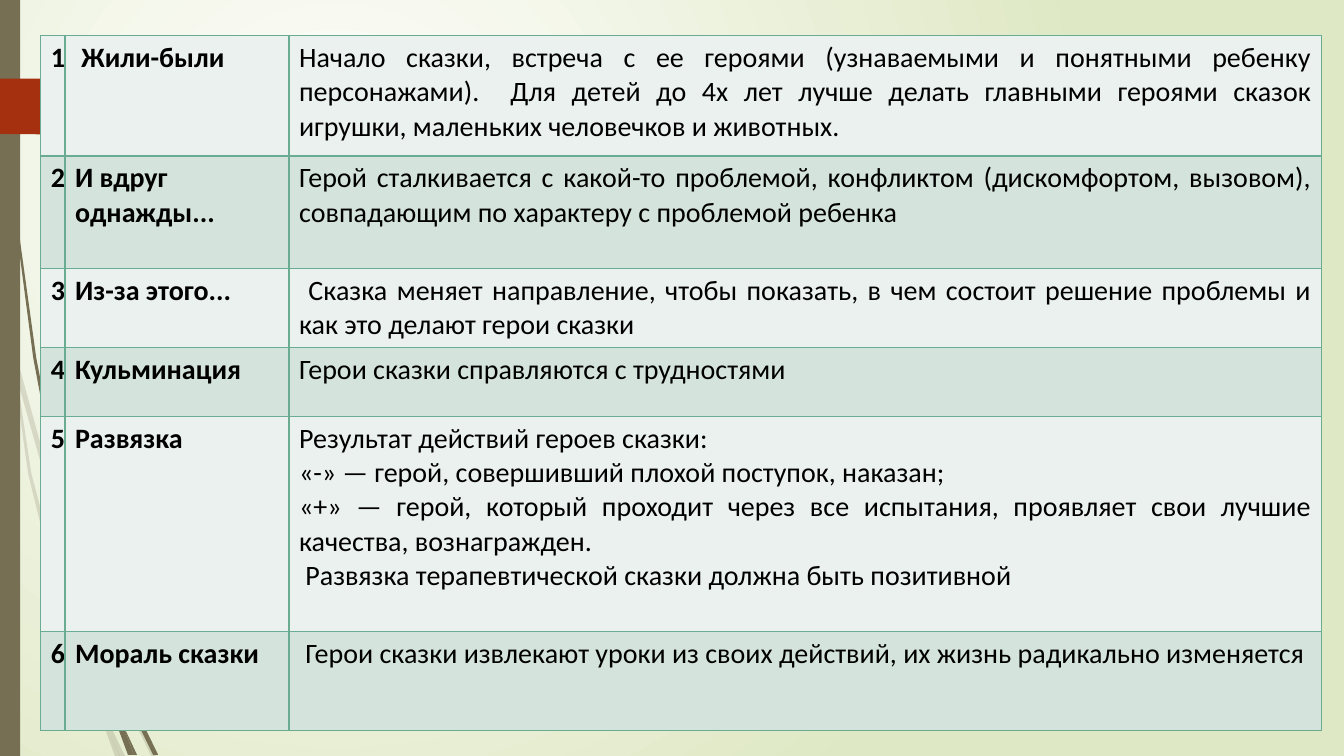
from lxml import etree
from pptx import Presentation, util as u
from pptx.dml.color import RGBColor
from pptx.enum import shapes, text
from pptx.oxml import ns

COLORS = {
    "white": "FFFFFF", "lime": "DFE8C4", "olive": "766F54", "flag": "A53010",
    "line": "6AAC91", "light": "EBF1EE", "band": "D4E3DC", "ink": "000000",
}
STAGES = [
    ("1", " Жили-были", [
        "Начало сказки, встреча с ее героями (узнаваемыми и понятными ребенку персонажами).  "
        "Для детей до 4х лет лучше делать главными героями сказок игрушки, маленьких человечков и животных."]),
    ("2", "И вдруг однажды...", [
        "Герой сталкивается с какой-то проблемой, конфликтом (дискомфортом, вызовом), "
        "совпадающим по характеру с проблемой ребенка"]),
    ("3", "Из-за этого...", [
        " Сказка меняет направление, чтобы показать, в чем состоит решение проблемы "
        "и как это делают герои сказки"]),
    ("4", "Кульминация", ["Герои сказки справляются с трудностями"]),
    ("5", "Развязка", [
        "Результат действий героев сказки:",
        "«-» — герой, совершивший плохой поступок, наказан;",
        "«+» — герой, который проходит через все испытания, проявляет свои лучшие качества, вознагражден.",
        " Развязка терапевтической сказки должна быть позитивной"]),
    ("6", "Мораль сказки", [
        " Герои сказки извлекают уроки из своих действий, их жизнь радикально изменяется"]),
]
COL_WIDTHS = [17, 160, 737.5]
ROW_HEIGHTS = [86, 80.5, 56.5, 49, 153.5, 71]
TABLE_LEFT, TABLE_TOP = 29.2, 25.5
FONT = {"name": "Calibri", "size": u.Pt(20)}

UNIT = u.Pt(0.72)
PALE_WISPS = [
    [(11, 350), (9, 322), (0, 282), (0, 299), (10, 344)],
    [(58, 522), (84, 599), (85, 586), (62, 520), (14, 345), (17, 376)],
    [(92, 607), (88, 596), (88, 610), (123, 694), (150, 750), (155, 750), (127, 692)],
    [(119, 750), (124, 750), (105, 711)],
    [(93, 683), (70, 619), (31, 469), (17, 376), (11, 350), (28, 470), (65, 621),
     (92, 693), (101, 714), (99, 707)],
    [(84, 599), (87, 646), (93, 683), (96, 692), (105, 711), (103, 706), (91, 646),
     (88, 610), (88, 608)],
    [(88, 584), (110, 462), (160, 349), (229, 245), (268, 198), (290, 175), (312, 154),
     (312, 153), (289, 175), (268, 197), (228, 244), (158, 348), (107, 461), (85, 584),
     (85, 586), (88, 596)],
    [(101, 714), (114, 750), (119, 750)],
    [(88, 608), (88, 610), (88, 596), (85, 586), (84, 599)],
    [(96, 692), (93, 683), (99, 707), (101, 714), (119, 750), (105, 711)],
]
DARK_WISPS = [
    [(7, 110), (17, 233), (33, 355), (56, 477), (57, 481), (55, 457), (55, 453), (36, 355),
     (19, 232), (8, 109), (5, 48), (4, 0), (3, 0), (4, 48)],
    [(88, 592), (106, 645), (106, 633), (106, 631), (93, 590), (60, 472), (64, 505)],
    [(113, 649), (110, 641), (111, 656), (132, 708), (152, 749), (157, 749), (136, 706)],
    [(110, 691), (98, 657), (72, 556), (64, 505), (57, 477), (68, 557), (93, 659),
     (111, 708), (117, 722), (116, 717)],
    [(60, 472), (58, 453), (54, 349), (58, 245), (63, 193), (70, 141), (62, 193), (56, 245),
     (52, 349), (55, 449)],
    [(133, 749), (136, 749), (122, 719)],
    [(57, 477), (64, 505), (60, 472), (55, 449), (55, 453)],
    [(111, 633), (125, 552), (158, 476), (205, 406), (231, 374), (245, 359), (261, 344),
     (260, 344), (245, 358), (231, 373), (204, 405), (156, 474), (122, 551), (106, 631),
     (110, 641)],
    [(117, 722), (127, 749), (131, 749)],
    [(106, 645), (110, 691), (116, 706), (122, 719), (121, 716), (111, 656), (109, 651)],
    [(106, 645), (109, 651), (111, 656), (110, 641), (106, 631), (106, 633)],
    [(116, 706), (110, 691), (116, 717), (117, 722), (130, 749), (133, 749), (122, 719)],
]
FLAG = [(173, 108), (148, 133), (146, 134), (136, 134), (0, 133), (0, 78), (136, 78),
        (146, 78), (148, 79), (173, 104), (174, 106)]


def rgb(name):
    return RGBColor.from_string(COLORS[name])


def paint(sp, color, alpha=None):
    sp.shadow.inherit = False
    sp.line.fill.background()
    sp.fill.solid()
    sp.fill.fore_color.rgb = rgb(color)
    if alpha:
        clr = next(sp.element.iter(ns.qn("a:srgbClr")))
        etree.SubElement(clr, ns.qn("a:alpha"), val=str(alpha * 1000))


def outline(parent, points, color, alpha=None):
    builder = parent.build_freeform(*points[0], scale=UNIT)
    builder.add_line_segments(points[1:], close=True)
    paint(builder.convert_to_shape(), color, alpha)


def border(cell):
    tc_pr = cell._tc.get_or_add_tcPr()
    for side in "LRTB":
        ln = etree.SubElement(tc_pr, ns.qn(f"a:ln{side}"), w=str(u.Pt(1)))
        fill = etree.SubElement(ln, ns.qn("a:solidFill"))
        etree.SubElement(fill, ns.qn("a:srgbClr"), val=COLORS["line"])


def fill_cell(cell, lines, color, bold, align):
    border(cell)
    cell.fill.solid()
    cell.fill.fore_color.rgb = rgb(color)
    tf = cell.text_frame
    for i, line in enumerate(lines):
        p = tf.add_paragraph() if i else tf.paragraphs[0]
        p.alignment = align
        r = p.add_run()
        r.text = line
        for key, value in {**FONT, "bold": bold}.items():
            setattr(r.font, key, value)
        r.font.color.rgb = rgb("ink")


def set_background(s):
    fill = s.background.fill
    fill.gradient()
    for stop, position, color in zip(fill.gradient_stops, (0, 1), ("white", "lime")):
        stop.position = position
        stop.color.rgb = rgb(color)
    grad = next(s.element.iter(ns.qn("a:gradFill")))
    lin = grad.find(ns.qn("a:lin"))
    circle = etree.Element(ns.qn("a:path"), path="circle")
    etree.SubElement(circle, ns.qn("a:fillToRect"), l="50000", t="50000", r="100000", b="100000")
    grad.replace(lin, circle)


def add_stage_table(s):
    table = s.shapes.add_table(
        len(STAGES), len(COL_WIDTHS), u.Pt(TABLE_LEFT), u.Pt(TABLE_TOP),
        u.Pt(sum(COL_WIDTHS)), u.Pt(sum(ROW_HEIGHTS))).table
    table.first_row = table.horz_banding = False
    for col, width in zip(table.columns, COL_WIDTHS):
        col.width = u.Pt(width)
    for i, (number, name, lines) in enumerate(STAGES):
        table.rows[i].height = u.Pt(ROW_HEIGHTS[i])
        color = "band" if i % 2 else "light"
        for j, content in enumerate(([number], [name], lines)):
            align = text.PP_ALIGN.JUSTIFY if j == 2 else text.PP_ALIGN.LEFT
            fill_cell(table.cell(i, j), content, color, j < 2, align)


def main():
    prs = Presentation()
    prs.slide_width, prs.slide_height = u.Pt(960), u.Pt(540)
    s = prs.slides.add_slide(prs.slide_layouts[6])
    set_background(s)
    for wisps, alpha in ((PALE_WISPS, 20), (DARK_WISPS, None)):
        group = s.shapes.add_group_shape()
        for points in wisps:
            outline(group.shapes, points, "olive", alpha)
    strip = s.shapes.add_shape(shapes.MSO_SHAPE.RECTANGLE, 0, 0, u.Pt(14.4), u.Pt(540))
    paint(strip, "olive")
    outline(s.shapes, FLAG, "flag")
    add_stage_table(s)
    prs.save("out.pptx")


if __name__ == "__main__":
    main()
